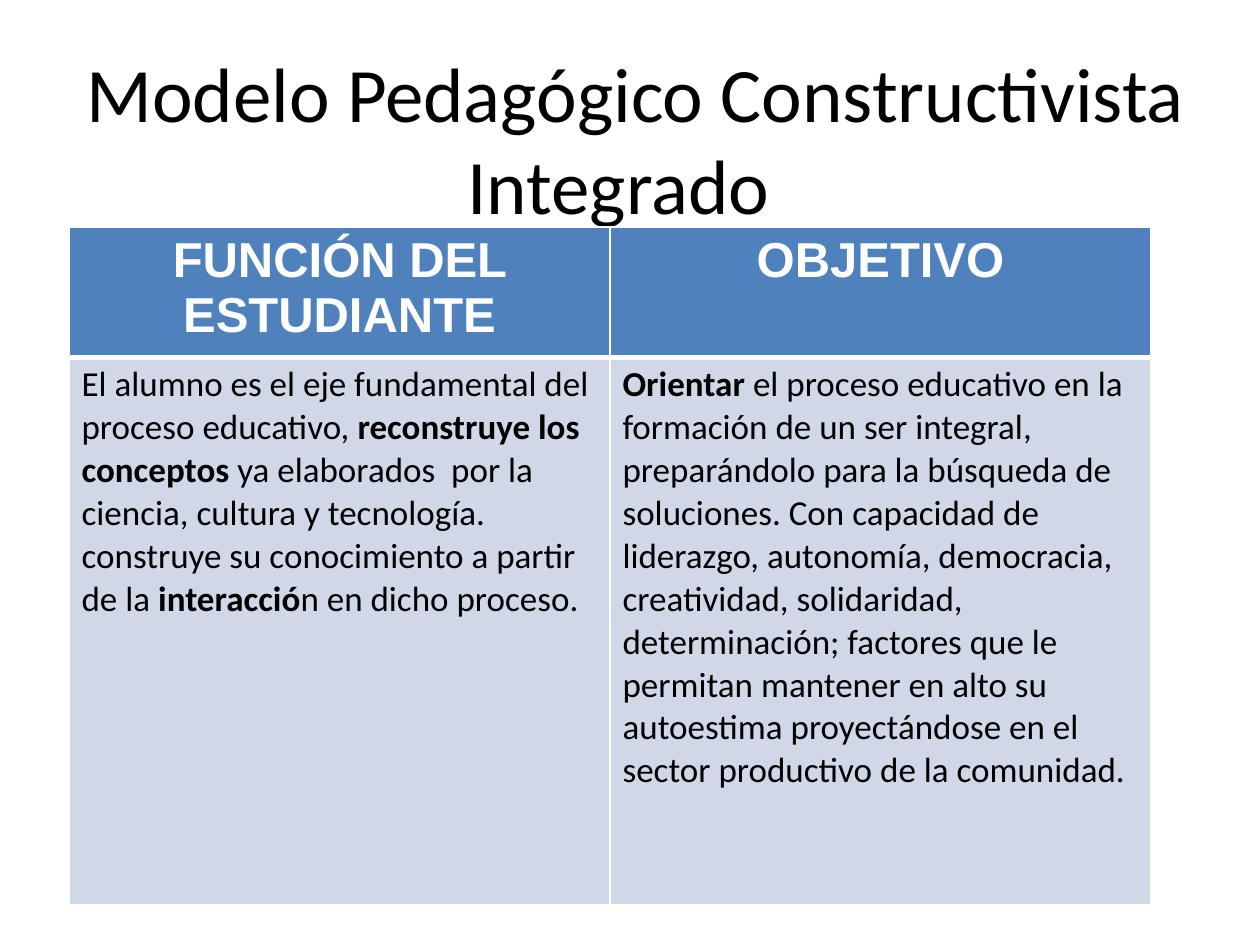
from dataclasses import dataclass

from lxml import etree
from pptx import Presentation
from pptx import util as u
from pptx.dml.color import RGBColor
from pptx.enum import text
from pptx.oxml import ns

PX = 914400 // 126


@dataclass(frozen=True)
class Theme:
    ink: str = "000000"
    white: str = "FFFFFF"
    header: str = "4F81BD"
    body: str = "D0D8E8"
    title_font: str = "Calibri"
    header_font: str = "Arial"
    title_size: int = 44
    header_size: int = 28
    body_size: int = 20
    thin: int = 1
    thick: int = 3


THEME = Theme()
LEFT, CENTER = text.PP_ALIGN.LEFT, text.PP_ALIGN.CENTER

TITLE = "Modelo Pedagógico Constructivista Integrado  "
HEADERS = ["FUNCIÓN DEL ESTUDIANTE", "OBJETIVO"]
# Each cell is a list of (wording, bold) spans.
BODIES = [
    [
        ("El alumno es el eje fundamental del proceso educativo, ", False),
        ("reconstruye los conceptos", True),
        (" ya elaborados  por la ciencia, cultura y tecnología. "
         "construye su conocimiento a partir de la ", False),
        ("interacció", True),
        ("n en dicho proceso.", False),
    ],
    [
        ("Orientar ", True),
        ("el proceso educativo en la formación de un ser integral, "
         "preparándolo para la búsqueda de soluciones. Con capacidad de "
         "liderazgo, autonomía, democracia, creatividad, solidaridad, "
         "determinación; factores que le permitan mantener en alto su "
         "autoestima proyectándose en el sector productivo de la comunidad.",
         False),
    ],
]


def px(*lengths):
    return [u.Emu(length * PX) for length in lengths]


def write(frame, spans, *, font, size, color, align=LEFT):
    """Fill the first paragraph of a text frame with (wording, bold) spans."""
    para = frame.paragraphs[0]
    para.alignment = align
    for wording, bold in spans:
        span = para.add_run()
        span.text = wording
        span.font.name = font
        span.font.size = u.Pt(size)
        span.font.bold = bold
        span.font.color.rgb = RGBColor.from_string(color)


def style_cell(cell, fill, top, bottom):
    """Give a cell white borders, then its fill; top and bottom are in points."""
    properties = cell._tc.get_or_add_tcPr()
    widths = {"L": THEME.thin, "R": THEME.thin, "T": top, "B": bottom}
    for side, width in widths.items():
        line = etree.SubElement(properties, ns.qn(f"a:ln{side}"), w=str(u.Pt(width)))
        solid = etree.SubElement(line, ns.qn("a:solidFill"))
        etree.SubElement(solid, ns.qn("a:srgbClr"), val=THEME.white)
    cell.fill.solid()
    cell.fill.fore_color.rgb = RGBColor.from_string(fill)


def add_title(page, box):
    frame = page.shapes.add_textbox(*px(*box)).text_frame
    frame.word_wrap = True
    frame.vertical_anchor = text.MSO_ANCHOR.MIDDLE
    write(frame, [(TITLE, False)], font=THEME.title_font, size=THEME.title_size,
          color=THEME.ink, align=CENTER)


def add_comparison(page, box, header_height):
    left, top, width, height = box
    table = page.shapes.add_table(2, len(HEADERS), *px(left, top, width, height)).table
    for column in table.columns:
        column.width = px(width // len(HEADERS))[0]
    for row, row_height in zip(table.rows, px(header_height, height - header_height)):
        row.height = row_height
    for index, (heading, spans) in enumerate(zip(HEADERS, BODIES)):
        header, body = table.cell(0, index), table.cell(1, index)
        style_cell(header, THEME.header, THEME.thin, THEME.thick)
        style_cell(body, THEME.body, THEME.thick, THEME.thin)
        write(header.text_frame, [(heading, True)], font=THEME.header_font,
              size=THEME.header_size, color=THEME.white, align=CENTER)
        write(body.text_frame, spans, font=THEME.title_font,
              size=THEME.body_size, color=THEME.ink)


def main():
    deck = Presentation()
    deck.slide_width, deck.slide_height = px(1260, 945)
    page = deck.slides.add_slide(deck.slide_layouts[6])
    add_title(page, (69, 59, 1134, 158))
    add_comparison(page, (69, 227, 1082, 650), header_height=103)
    deck.save("out.pptx")


if __name__ == "__main__":
    main()
